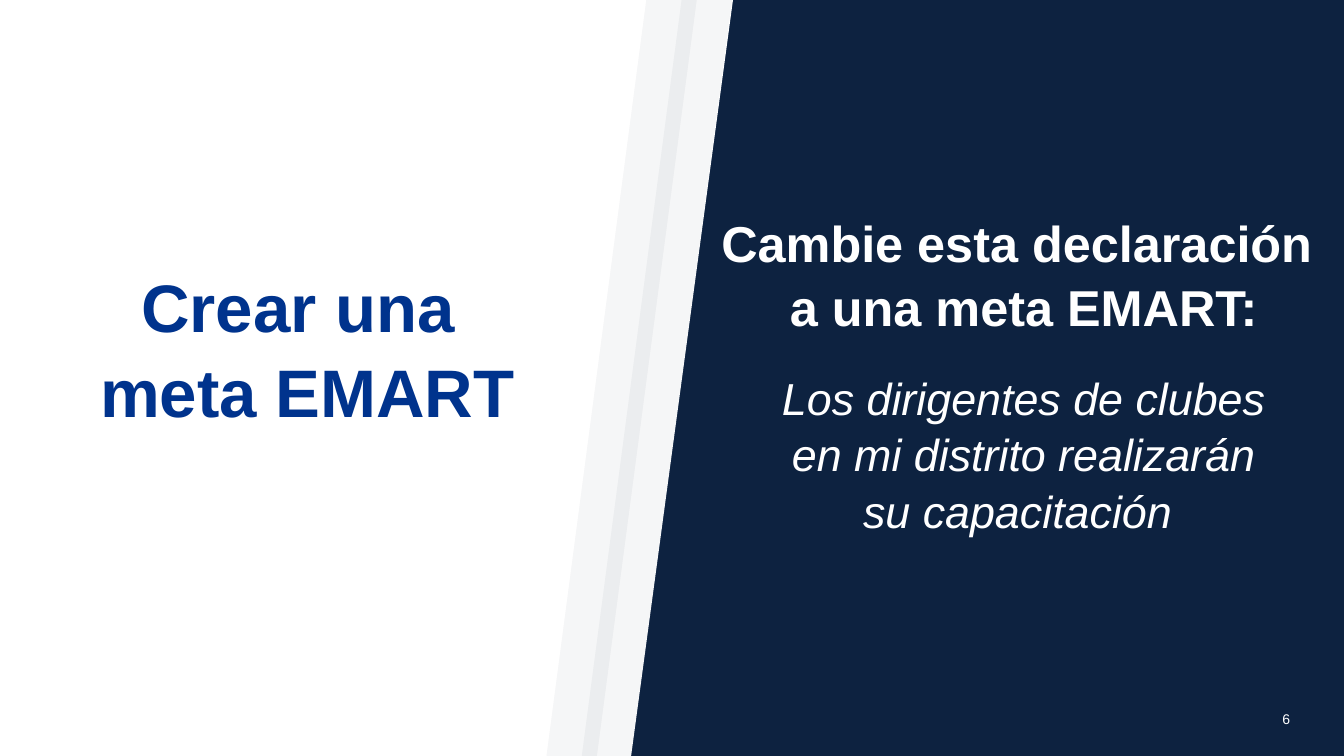
from pptx import Presentation
from pptx.dml.color import RGBColor
from pptx.enum.shapes import MSO_SHAPE
from pptx.enum.text import MSO_ANCHOR, PP_ALIGN
from pptx.oxml.ns import qn
from pptx.util import Inches, Pt
from lxml import etree

RECT = MSO_SHAPE.RECTANGLE
TOP, BOTTOM = MSO_ANCHOR.TOP, MSO_ANCHOR.BOTTOM
LEFT, CENTER = PP_ALIGN.LEFT, PP_ALIGN.CENTER
WIDE, HIGH = 13.33, 7.5
COLORS = {"navy": "0D2240", "blue": "00338D", "white": "FFFFFF"}


def paint(shape, color, alpha=None):
    """Give a shape a plain fill, with an optional opacity in percent."""
    shape.shadow.inherit = False
    shape.line.fill.background()
    shape.fill.solid()
    shape.fill.fore_color.rgb = RGBColor.from_string(COLORS[color])
    if alpha:
        tone = shape.fill._xPr.find(".//" + qn("a:srgbClr"))
        etree.SubElement(tone, qn("a:alpha"), val=str(alpha * 1000))


def draw_poly(slide, points, color, alpha=None):
    """Draw a closed outline through points given in inches."""
    first, *rest = [(Inches(x), Inches(y)) for x, y in points]
    build = slide.shapes.build_freeform(*first)
    build.add_line_segments(rest, close=True)
    paint(build.convert_to_shape(), color, alpha)


def add_text(slide, box, lines, size, color, anchor=TOP, align=CENTER,
             bold=False, italic=False, space=1.05):
    """Place one paragraph per line in a box of left, top, width, height."""
    frame = slide.shapes.add_textbox(*map(Inches, box)).text_frame
    frame.word_wrap = True
    frame.vertical_anchor = anchor
    frame.text = "\n".join(lines)
    for para in frame.paragraphs:
        para.alignment = align
        para.line_spacing = space
        for run in para.runs:
            font = run.font
            font.name, font.size = "Arial", Pt(size)
            font.bold, font.italic = bold, italic
            font.color.rgb = RGBColor.from_string(COLORS[color])


def add_back(slide, box):
    """Fill the box with navy, a slanted white panel and two pale bands."""
    x, y, w, h = box
    base = slide.shapes.add_shape(RECT, *map(Inches, box))
    paint(base, "navy")
    draw_poly(slide, [(x, y), (x + 7.27, y), (x + 6.26, y + h), (x, y + h)],
              "white")
    for low in (x + 5.42, x + 5.77):
        high = low + 0.99
        draw_poly(slide, [(high, y), (high + 0.5, y),
                          (low + 0.5, y + h), (low, y + h)], "navy", 4)


def add_title(slide, box):
    """Write the slide title at the foot of the box."""
    add_text(slide, box, ["Crear una ", "meta EMART"], 48, "blue",
             BOTTOM, bold=True)


def add_task(slide, box):
    """Write the prompt and the statement to change inside the box."""
    x, y, w, h = box
    add_text(slide, (x, y, w, 1.29),
             ["Cambie esta declaración ", "a una meta EMART:"],
             36, "white", bold=True)
    add_text(slide, (x + 0.52, y + 1.57, w - 1.04, h - 1.57),
             ["Los dirigentes de clubes en mi distrito realizarán "
              "su capacitación "], 32, "white", italic=True)


def add_page(slide, box):
    """Write the slide number in the box."""
    add_text(slide, box, ["6"], 10, "white", align=LEFT, space=1.0)


def main():
    """Build the slide and save it."""
    deck = Presentation()
    deck.slide_width, deck.slide_height = Inches(WIDE), Inches(HIGH)
    slide = deck.slides.add_slide(deck.slide_layouts[6])
    add_back(slide, (0, 0, WIDE, HIGH))
    add_title(slide, (0.51, 2.6, 5.08, 1.72))
    add_page(slide, (12.62, 7, 0.71, 0.5))
    add_task(slide, (6.98, 2.03, 6.35, 3.29))
    deck.save("out.pptx")


if __name__ == "__main__":
    main()
